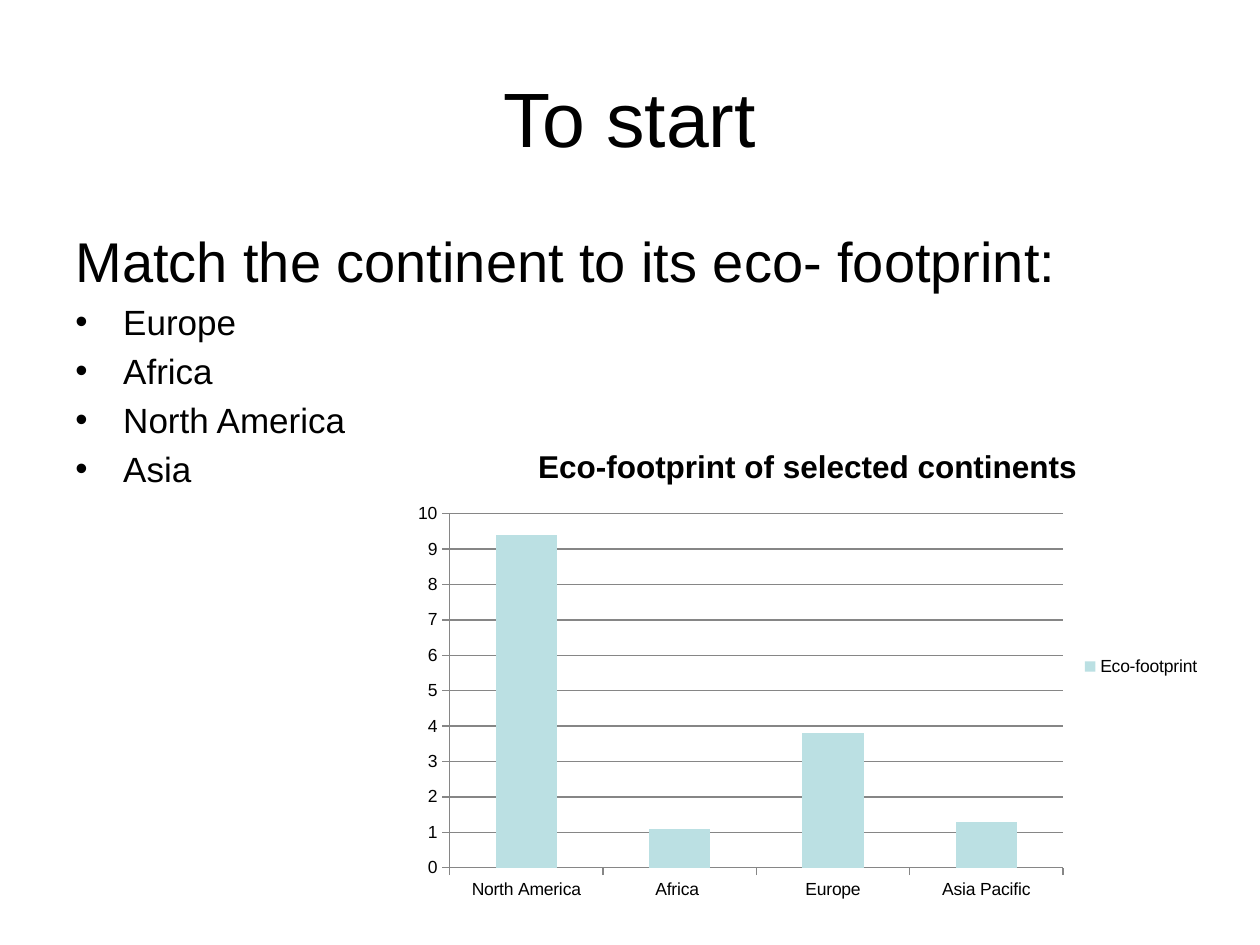
from pptx import Presentation
from pptx.chart.data import CategoryChartData
from pptx.dml.color import RGBColor
from pptx.enum.chart import XL_CHART_TYPE, XL_LEGEND_POSITION, XL_TICK_MARK
from pptx.enum.text import MSO_ANCHOR, PP_ALIGN
from pptx.oxml.ns import qn
from pptx.util import Inches, Pt
from lxml.etree import SubElement

BLACK = RGBColor(0x00, 0x00, 0x00)
GREY = RGBColor(0x86, 0x86, 0x86)
PALE_TEAL = RGBColor(0xBB, 0xE0, 0xE3)
FONT = "Arial"
CONTINENTS = ["Europe", "Africa", "North America", "Asia"]
FOOTPRINTS = {"North America": 9.4, "Africa ": 1.1, "Europe": 3.8, "Asia Pacific": 1.3}


class SlideBuilder:
    """Hold the text style and the current slide, and add elements to it."""

    def __init__(self, slide, font=FONT, color=BLACK):
        self.slide = slide
        self.font = font
        self.color = color

    def style(self, font, size, bold=False):
        font.name = self.font
        font.size = Pt(size)
        font.bold = bold
        font.color.rgb = self.color

    def text_box(self, left, top, width, height, anchor=MSO_ANCHOR.TOP):
        shape = self.slide.shapes.add_textbox(
            Inches(left), Inches(top), Inches(width), Inches(height))
        text_frame = shape.text_frame
        text_frame.word_wrap = True
        text_frame.vertical_anchor = anchor
        return text_frame

    def title(self, text, left, top, width, height):
        text_frame = self.text_box(left, top, width, height, MSO_ANCHOR.MIDDLE)
        text_frame.text = text
        paragraph = text_frame.paragraphs[0]
        paragraph.alignment = PP_ALIGN.CENTER
        self.style(paragraph.runs[0].font, 44)

    def body(self, heading, items, left, top, width, height):
        text_frame = self.text_box(left, top, width, height)
        text_frame.text = "\n".join([heading, *items])
        for index, paragraph in enumerate(text_frame.paragraphs):
            self.style(paragraph.runs[0].font, 20 if index else 32)
            properties = paragraph._p.get_or_add_pPr()
            spacing = SubElement(properties, qn("a:spcBef"))
            SubElement(spacing, qn("a:spcPct")).set("val", "20000")
            if index:
                properties.set("marL", str(Inches(0.38)))
                properties.set("indent", str(-Inches(0.38)))
                SubElement(properties, qn("a:buFont")).set("typeface", self.font)
                SubElement(properties, qn("a:buChar")).set("char", "•")

    def column_chart(self, title, series_name, values, left, top, width, height):
        data = CategoryChartData()
        data.categories = list(values)
        data.add_series(series_name, list(values.values()))
        chart = self.slide.shapes.add_chart(
            XL_CHART_TYPE.COLUMN_CLUSTERED, Inches(left), Inches(top),
            Inches(width), Inches(height), data).chart
        self.style(chart.font, 10)
        chart.has_title = True
        chart.chart_title.include_in_layout = False
        title_frame = chart.chart_title.text_frame
        title_frame.text = title
        self.style(title_frame.paragraphs[0].runs[0].font, 18, bold=True)
        chart.has_legend = True
        chart.legend.position = XL_LEGEND_POSITION.RIGHT
        chart.legend.include_in_layout = False
        for axis in (chart.category_axis, chart.value_axis):
            axis.major_tick_mark = XL_TICK_MARK.OUTSIDE
            axis.format.line.color.rgb = GREY
        axis = chart.value_axis
        axis.minimum_scale, axis.maximum_scale, axis.major_unit = 0, 10, 1
        axis.has_major_gridlines = True
        axis.major_gridlines.format.line.color.rgb = GREY
        plot = chart.plots[0]
        plot.gap_width = 150
        plot.vary_by_categories = False
        fill = plot.series[0].format.fill
        fill.solid()
        fill.fore_color.rgb = PALE_TEAL


def main():
    presentation = Presentation()
    presentation.slide_width = Inches(10)
    presentation.slide_height = Inches(7.5)
    slide = presentation.slides.add_slide(presentation.slide_layouts[6])
    builder = SlideBuilder(slide)
    builder.title("To start", 0.5, 0.3, 9, 1.25)
    builder.body("Match the continent to its eco- footprint:", CONTINENTS,
                 0.5, 1.75, 9, 4.95)
    builder.column_chart("Eco-footprint of selected continents", "Eco-footprint",
                         FOOTPRINTS, 3.19, 3.36, 6.44, 3.86)
    presentation.save("out.pptx")


if __name__ == "__main__":
    main()
